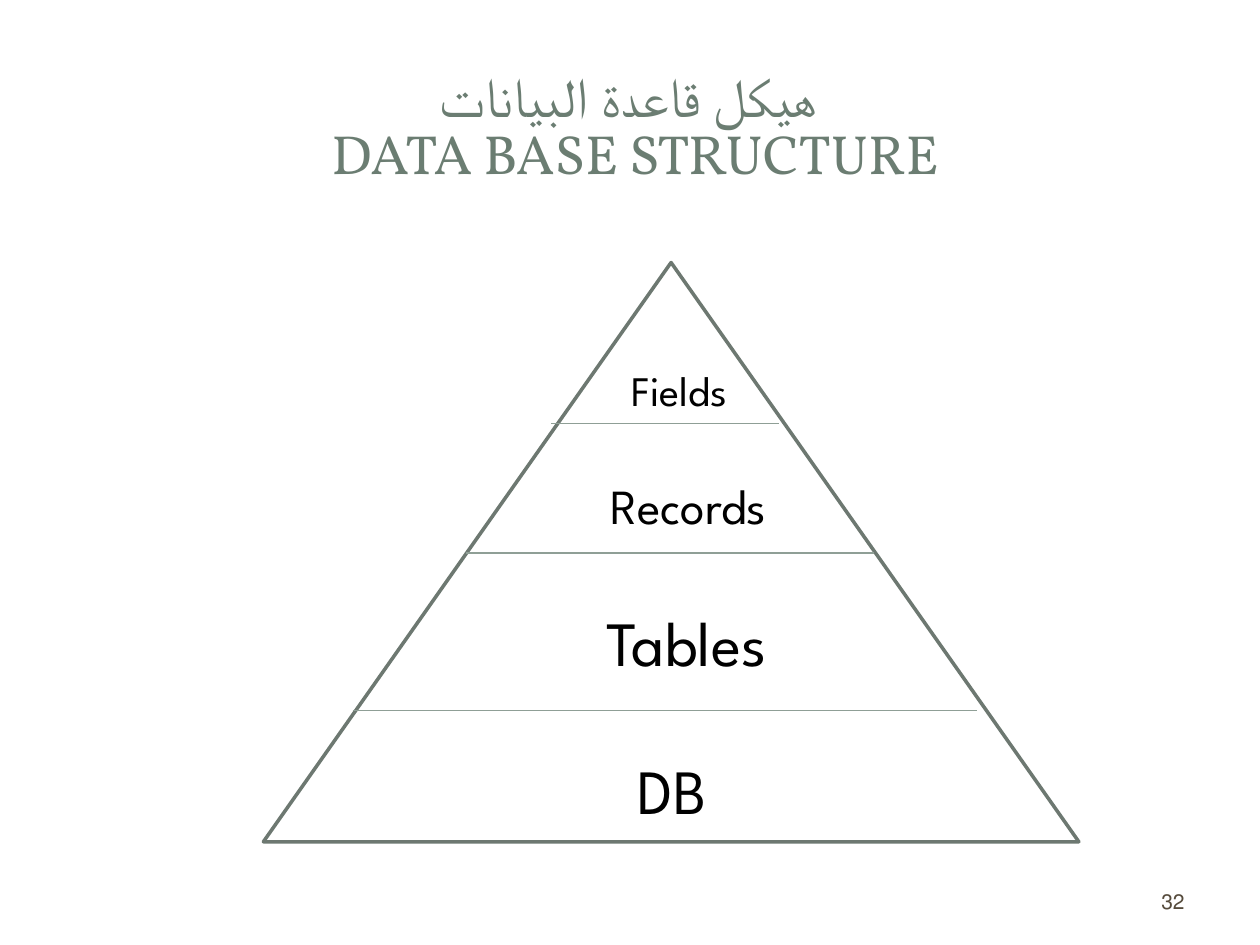
import dataclasses

import pptx
import pptx.dml.color
import pptx.enum.shapes
import pptx.enum.text
import pptx.oxml
import pptx.oxml.ns
import pptx.util

Pt = pptx.util.Pt
Align = pptx.enum.text.PP_ALIGN
Anchor = pptx.enum.text.MSO_ANCHOR
AutoSize = pptx.enum.text.MSO_AUTO_SIZE


@dataclasses.dataclass(frozen=True)
class Theme:
    background: str = "FFFFFF"
    title: str = "6B7D72"
    outline: str = "6D7871"
    divider: str = "8F9F96"
    label: str = "000000"
    number: str = "564B3C"
    heading_font: str = "Vollkorn"
    body_font: str = "League Spartan"
    title_size: float = 31.5
    number_size: float = 12
    small_size: float = 24
    medium_size: float = 28
    large_size: float = 36
    outline_width: float = 2
    divider_width: float = 0.75


def color(value):
    return pptx.dml.color.RGBColor.from_string(value)


def assign(target, values):
    for name, value in values.items():
        setattr(target, name, value)


class SlideBuilder:
    def __init__(self, slide, theme):
        self.slide = slide
        self.theme = theme
        slide.background.fill.solid()
        slide.background.fill.fore_color.rgb = color(theme.background)

    def fill_text(self, shape, text, font, size, ink, frame_format, paragraph_format):
        assign(shape.text_frame, {"word_wrap": True, **frame_format})
        paragraph = shape.text_frame.paragraphs[0]
        paragraph.text = text
        assign(paragraph, paragraph_format)
        paragraph._p.get_or_add_pPr().set("rtl", "1")
        for run in paragraph.runs:
            assign(run.font, {"name": font, "size": Pt(size)})
            run.font.color.rgb = color(ink)

    def title(self, text, left, top, width, height):
        shape = self.slide.shapes.title
        assign(shape, {"left": Pt(left), "top": Pt(top), "width": Pt(width), "height": Pt(height)})
        self.fill_text(
            shape, text, self.theme.heading_font, self.theme.title_size, self.theme.title,
            {"vertical_anchor": Anchor.MIDDLE, "auto_size": AutoSize.NONE},
            {"alignment": Align.CENTER, "line_spacing": 0.86},
        )

    def text(self, text, left, top, width, height, size, ink, frame_format):
        shape = self.slide.shapes.add_textbox(Pt(left), Pt(top), Pt(width), Pt(height))
        self.fill_text(shape, text, self.theme.body_font, size, ink, frame_format, {"alignment": Align.RIGHT})

    def label(self, text, left, top, width, height, size):
        self.text(text, left, top, width, height, size, self.theme.label,
                  {"auto_size": AutoSize.SHAPE_TO_FIT_TEXT})

    def page_number(self, text, left, top, width, height):
        self.text(text, left, top, width, height, self.theme.number_size, self.theme.number,
                  {"vertical_anchor": Anchor.MIDDLE})

    def triangle(self, left, top, width, height):
        shape = self.slide.shapes.add_shape(
            pptx.enum.shapes.MSO_SHAPE.ISOSCELES_TRIANGLE, Pt(left), Pt(top), Pt(width), Pt(height)
        )
        shape.shadow.inherit = False
        shape.fill.solid()
        shape.fill.fore_color.rgb = color(self.theme.background)
        shape.line.color.rgb = color(self.theme.outline)
        shape.line.width = Pt(self.theme.outline_width)

    def divider(self, left, right, y):
        connector = self.slide.shapes.add_connector(
            pptx.enum.shapes.MSO_CONNECTOR.STRAIGHT, Pt(left), Pt(y), Pt(right), Pt(y)
        )
        connector.line.color.rgb = color(self.theme.divider)
        connector.line.width = Pt(self.theme.divider_width)
        properties = connector._element.spPr
        properties.append(pptx.oxml.parse_xml(f"<a:effectLst {pptx.oxml.ns.nsdecls('a')}/>"))


def main():
    presentation = pptx.Presentation()
    assign(presentation, {"slide_width": Pt(720), "slide_height": Pt(540)})
    theme = Theme()
    slide = presentation.slides.add_slide(presentation.slide_layouts[5])
    builder = SlideBuilder(slide, theme)

    builder.title("هيكل قاعدة البيانات\vDATA BASE STRUCTURE ", 34, 32.5, 650, 82)
    builder.page_number("32", 516, 500.5, 168, 29)
    builder.triangle(150.5, 150, 466, 331)
    for left, right, y in ((315, 445, 242), (266.5, 499.5, 316), (201.5, 558.5, 406)):
        builder.divider(left, right, y)
    for text, left, top, width, height, size in (
        ("Fields", 332, 204.5, 90.5, 36, theme.small_size),
        ("Records", 314.5, 268, 130.5, 41, theme.medium_size),
        ("Tables", 297.5, 341.5, 147.5, 51, theme.large_size),
        ("DB", 332, 426, 79, 51, theme.large_size),
    ):
        builder.label(text, left, top, width, height, size)

    presentation.save("out.pptx")


if __name__ == "__main__":
    main()
